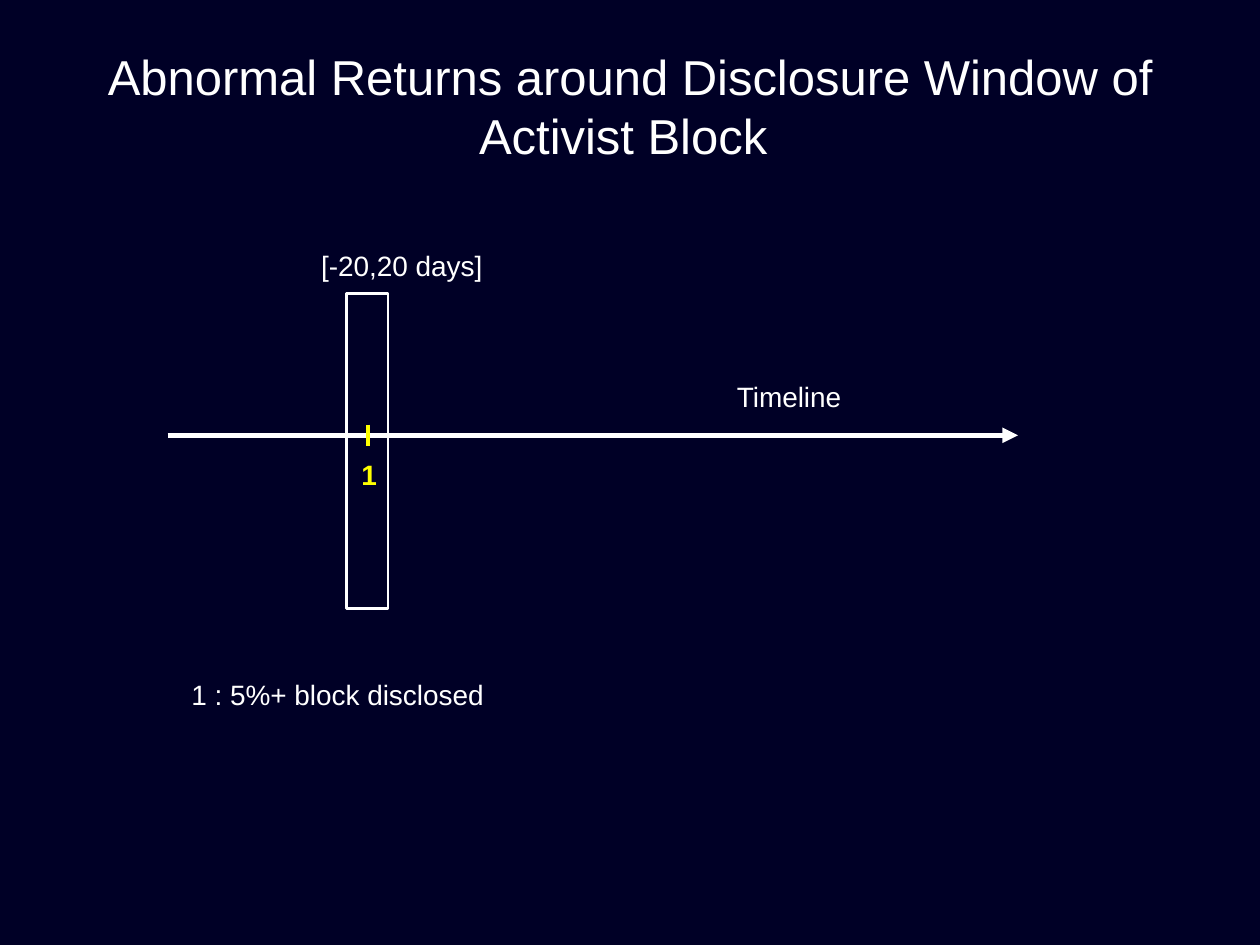
from lxml import etree
from pptx import Presentation
from pptx.dml.color import RGBColor
from pptx.enum.shapes import MSO_CONNECTOR, MSO_SHAPE
from pptx.enum.text import MSO_ANCHOR, MSO_AUTO_SIZE, PP_ALIGN
from pptx.oxml.ns import qn
from pptx.util import Inches, Pt

NAVY = RGBColor(0x00, 0x00, 0x26)
WHITE = RGBColor(0xFF, 0xFF, 0xFF)
YELLOW = RGBColor(0xFF, 0xFF, 0x00)
STRAIGHT = MSO_CONNECTOR.STRAIGHT
RECT = MSO_SHAPE.RECTANGLE
MIDDLE = MSO_ANCHOR.MIDDLE
GROW = MSO_AUTO_SIZE.SHAPE_TO_FIT_TEXT
LEFT, CENTER, RIGHT = PP_ALIGN.LEFT, PP_ALIGN.CENTER, PP_ALIGN.RIGHT
FONT = "Arial"
TITLE_ONLY = 5


def write(frame, text, size, color=WHITE, align=LEFT, bold=False):
    frame.text = text
    para = frame.paragraphs[0]
    para.alignment = align
    font = para.runs[0].font
    font.name, font.size, font.bold = FONT, Pt(size), bold
    font.color.rgb = color


def add_label(slide, box, text, wrap=True, **style):
    frame = slide.shapes.add_textbox(*map(Inches, box)).text_frame
    frame.word_wrap = wrap
    frame.auto_size = GROW
    write(frame, text, 16, **style)


def add_line(slide, start, end, color, width, arrow=False):
    line = slide.shapes.add_connector(STRAIGHT, *map(Inches, start + end))
    line.line.color.rgb = color
    line.line.width = Pt(width)
    if arrow:
        etree.SubElement(line.line._get_or_add_ln(), qn("a:tailEnd"), type="triangle")
    etree.SubElement(line._element.spPr, qn("a:effectLst"))


def add_title(slide, box, text):
    title = slide.shapes.title
    title.left, title.top, title.width, title.height = map(Inches, box)
    frame = title.text_frame
    frame.word_wrap = True
    frame.vertical_anchor = MIDDLE
    write(frame, text, 28, align=CENTER)


def add_axis(slide, box):
    left, top, width, height = box
    mid = top + height / 2
    add_line(slide, (left, mid), (left + width, mid), WHITE, 3, arrow=True)
    add_label(slide, (left + 4.42, top - 0.41, 1.04, 0.37), "Timeline", wrap=False)

    # Event mark
    tick = left + 1.59
    add_line(slide, (tick, top), (tick, top + height), YELLOW, 2)
    add_label(slide, (tick - 0.16, top + 0.21, 0.33, 0.37), "1",
              color=YELLOW, align=RIGHT, bold=True)


def add_window(slide, box):
    left, top = box[:2]
    frame = slide.shapes.add_shape(RECT, *map(Inches, box))
    frame.shadow.inherit = False
    frame.fill.background()
    frame.line.color.rgb = WHITE
    frame.line.width = Pt(1.25)
    add_label(slide, (left - 0.3, top - 0.41, 1.5, 0.37), "[-20,20 days]", wrap=False)


def main():
    deck = Presentation()
    deck.slide_width, deck.slide_height = Inches(10), Inches(7.5)
    slide = deck.slides.add_slide(deck.slide_layouts[TITLE_ONLY])
    slide.background.fill.solid()
    slide.background.fill.fore_color.rgb = NAVY

    add_title(slide, (0.75, 0.25, 8.5, 1.17),
              "Abnormal Returns around Disclosure Window of Activist Block ")
    add_axis(slide, (1.33, 3.37, 6.75, 0.17))
    add_window(slide, (2.75, 2.33, 0.33, 2.5))
    # Key to the event mark
    add_label(slide, (1.42, 5.33, 3.5, 0.37), "1 : 5%+ block disclosed")
    deck.save("out.pptx")


if __name__ == "__main__":
    main()
